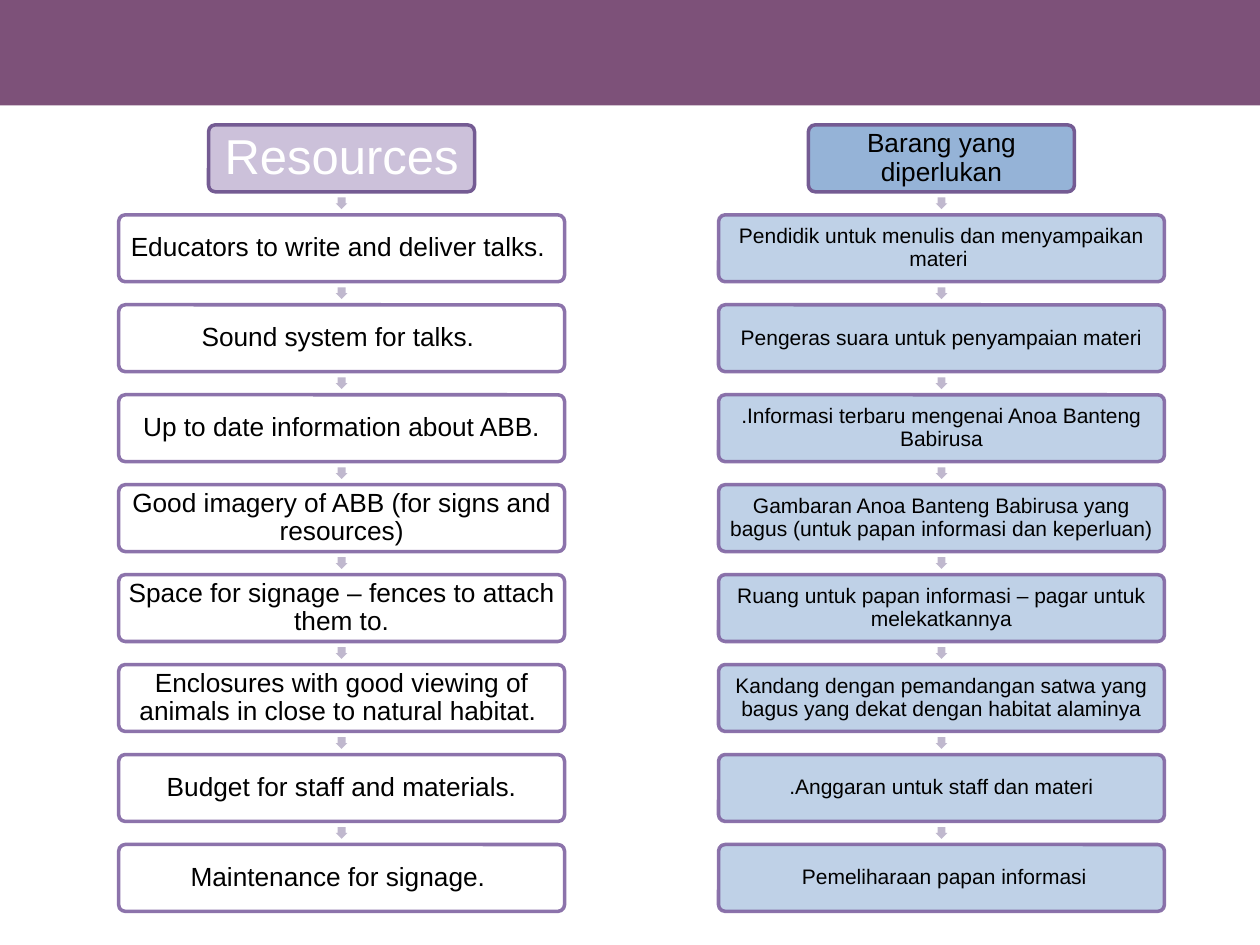
from lxml.etree import SubElement
from pptx import Presentation
from pptx.dml.color import RGBColor
from pptx.enum.shapes import MSO_SHAPE
from pptx.enum.text import MSO_ANCHOR, PP_ALIGN
from pptx.oxml.ns import qn
from pptx.util import Pt

COLORS = {
    "banner": "7D5179", "arrow": "C0B8CE",
    "header_line": "745B93", "step_line": "8064A2",
    "lilac": "CCC1DA", "blue": "95B3D7", "pale_blue": "B9CDE5",
    "white": "FFFFFF", "black": "000000",
}

# Flow geometry in points
TOP, PITCH, BOX_HEIGHT = 71.4, 51.4, 38.2
HEADER_WIDTH, STEP_WIDTH, ARROW_SIZE = 152, 254.8, 6.7

FLOWS = [
    dict(center=195.2, header="Resources", header_fill="lilac",
         header_text=dict(size=28, color="white", inset=2.9),
         step_fill="white", step_size=15, steps=[
             "Educators to write and deliver talks. ",
             "Sound system for talks. ",
             "Up to date information about ABB.",
             "Good imagery of ABB (for signs and resources)",
             "Space for signage – fences to attach them to.",
             "Enclosures with good viewing of animals in close to natural habitat. ",
             "Budget for staff and materials.",
             "Maintenance for signage. "]),
    dict(center=538, header="Barang yang diperlukan", header_fill="blue",
         header_text=dict(size=15),
         step_fill="pale_blue", step_size=12, steps=[
             "Pendidik untuk menulis dan menyampaikan materi ",
             "Pengeras suara untuk penyampaian materi",
             ".Informasi terbaru mengenai Anoa Banteng Babirusa",
             "Gambaran Anoa Banteng Babirusa yang bagus (untuk papan informasi dan keperluan)",
             "Ruang untuk papan informasi – pagar untuk melekatkannya",
             "Kandang dengan pemandangan satwa yang bagus yang dekat dengan habitat alaminya",
             ".Anggaran untuk staff dan materi",
             " Pemeliharaan papan informasi"]),
]


def write_text(frame, text, size=15, color="black", font="Arial", inset=1.5):
    frame.word_wrap = True
    frame.vertical_anchor = MSO_ANCHOR.MIDDLE
    frame.margin_left = frame.margin_right = Pt(inset)
    frame.margin_top = frame.margin_bottom = Pt(inset)
    paragraph = frame.paragraphs[0]
    paragraph.alignment = PP_ALIGN.CENTER
    paragraph.line_spacing = 0.9
    run = paragraph.add_run()
    run.text = text
    run.font.name, run.font.size = font, Pt(size)
    run.font.color.rgb = RGBColor.from_string(COLORS[color])


class FlowSlide:
    """Holds the slide and the look of its banner, boxes and arrows."""

    def __init__(self, slide, line_width=2, corner=0.1):
        self.slide = slide
        self.line_width = line_width
        self.corner = corner

    def block(self, preset, left, top, width, height, fill):
        block = self.slide.shapes.add_shape(
            preset, Pt(left), Pt(top), Pt(width), Pt(height))
        block.shadow.inherit = False
        block.fill.solid()
        block.fill.fore_color.rgb = RGBColor.from_string(COLORS[fill])
        block.line.fill.background()
        return block

    def banner(self, width, height):
        self.block(MSO_SHAPE.RECTANGLE, 0, 0, width, height, "banner")

    def box(self, center, top, width, text, fill, line, opacity=100, **text_format):
        box = self.block(MSO_SHAPE.ROUNDED_RECTANGLE, center - width / 2, top,
                         width, BOX_HEIGHT, fill)
        box.adjustments[0] = self.corner
        box.line.color.rgb = RGBColor.from_string(COLORS[line])
        box.line.width = Pt(self.line_width)
        if opacity < 100:
            for color in box._element.spPr.iter(qn("a:srgbClr")):
                SubElement(color, qn("a:alpha"), val=str(opacity * 1000))
        write_text(box.text_frame, text, **text_format)

    def down_arrow(self, center, middle):
        arrow = self.block(MSO_SHAPE.RIGHT_ARROW, center - ARROW_SIZE / 2,
                           middle - ARROW_SIZE / 2, ARROW_SIZE, ARROW_SIZE, "arrow")
        arrow.adjustments[0] = 0.667
        arrow.adjustments[1] = 0.5
        arrow.rotation = 90

    def flow(self, center, header, header_fill, header_text,
             step_fill, step_size, steps):
        self.box(center, TOP, HEADER_WIDTH, header, header_fill, "header_line",
                 **header_text)
        for row, step in enumerate(steps, start=1):
            top = TOP + row * PITCH
            self.down_arrow(center, top - (PITCH - BOX_HEIGHT) / 2)
            self.box(center, top, STEP_WIDTH, step, step_fill, "step_line",
                     opacity=90, size=step_size)


def main():
    deck = Presentation()
    deck.slide_width, deck.slide_height = Pt(720), Pt(540)
    resources = FlowSlide(deck.slides.add_slide(deck.slide_layouts[6]))

    # Top banner
    resources.banner(720, 60.2)

    # English and Indonesian columns
    for flow in FLOWS:
        resources.flow(**flow)

    deck.save("out.pptx")


if __name__ == "__main__":
    main()
